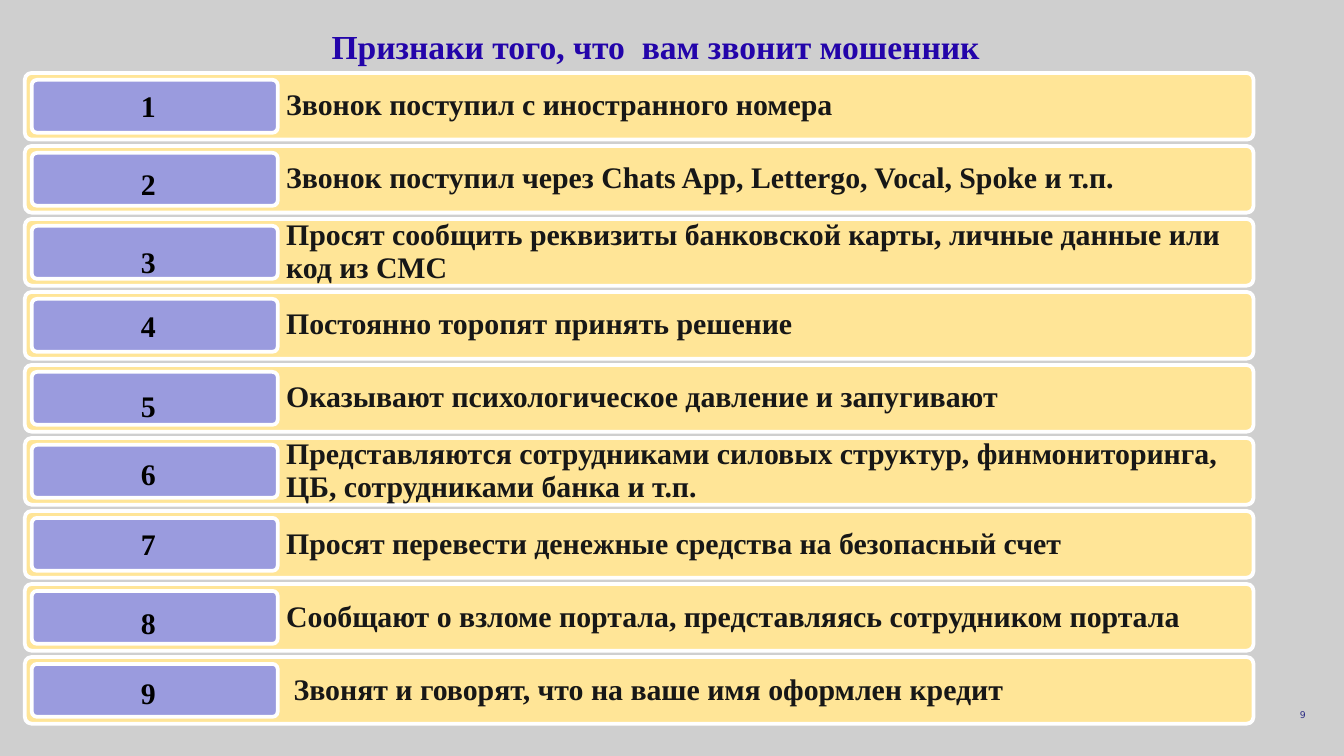
from pptx import Presentation
from pptx import util as u
from pptx.dml.color import RGBColor
from pptx.enum import shapes, text

GREY = RGBColor(0xCF, 0xCF, 0xCF)
WHITE = RGBColor(0xFF, 0xFF, 0xFF)
YELLOW = RGBColor(0xFF, 0xE5, 0x97)
LILAC = RGBColor(0x9A, 0x9B, 0xDE)
BLUE = RGBColor(0x23, 0x04, 0xAA)
NAVY = RGBColor(0x2B, 0x2C, 0x84)
INK = RGBColor(0x17, 0x17, 0x17)
BLACK = RGBColor(0, 0, 0)

SERIF = "Times New Roman"
ROW_PITCH = 1.38

# Each sign with the drop of its number below the top of the row, in cm
SIGNS = [
    ("Звонок поступил с иностранного номера", 0.09),
    ("Звонок поступил через Chats App, Lettergo, Vocal, Spoke и т.п.", 0.19),
    ("Просят сообщить реквизиты банковской карты, личные данные или код из СМС", 0.28),
    ("Постоянно торопят принять решение", 0.12),
    ("Оказывают психологическое давление и запугивают", 0.24),
    ("Представляются сотрудниками силовых структур, финмониторинга, "
     "ЦБ, сотрудниками банка и т.п.", 0.15),
    ("Просят перевести денежные средства на безопасный счет", 0.09),
    ("Сообщают о взломе портала, представляясь сотрудником портала", 0.21),
    (" Звонят и говорят, что на ваше имя оформлен кредит", 0.15),
]


def add_text(page, box, words, size, color, align, inset,
             font=SERIF, bold=True, anchor=text.MSO_ANCHOR.MIDDLE):
    """Place one paragraph of text in box (left, top, width, height in cm)."""
    frame = page.shapes.add_textbox(*map(u.Cm, box)).text_frame
    frame.word_wrap = True
    frame.vertical_anchor = anchor
    frame.margin_left = frame.margin_right = u.Cm(inset)
    frame.margin_top = frame.margin_bottom = u.Cm(min(inset, 0.18))
    para = frame.paragraphs[0]
    para.text = words
    para.alignment = align
    para.font.name = font
    para.font.size = u.Pt(size)
    para.font.bold = bold
    para.font.color.rgb = color
    return para


def add_panel(page, box, fill):
    """Place a rounded panel with a white outline."""
    panel = page.shapes.add_shape(
        shapes.MSO_SHAPE.ROUNDED_RECTANGLE, *map(u.Cm, box))
    panel.adjustments[0] = 0.1
    panel.shadow.inherit = False
    panel.fill.solid()
    panel.fill.fore_color.rgb = fill
    panel.line.color.rgb = WHITE
    panel.line.width = u.Pt(2)


def add_sign(page, box, number, words, drop):
    """Place one row: bar, wording, badge and number."""
    left, top, width, height = box
    text_left = 4.76
    add_panel(page, box, YELLOW)
    para = add_text(page, (left + text_left, top, width - text_left, height),
                    words, 16, INK, text.PP_ALIGN.LEFT, 0.18)
    para.line_spacing = 0.9
    add_panel(page, (left + 0.13, top + 0.13, 4.65, 1), LILAC)
    add_text(page, (left + 1.23, top + drop, 2.21, 0.94), str(number), 16,
             BLACK, text.PP_ALIGN.CENTER, 0.25, anchor=text.MSO_ANCHOR.TOP)


def add_sign_list(page, box):
    """Stack the rows at an equal pitch."""
    left, top, width, height = box
    row_height = height - ROW_PITCH * (len(SIGNS) - 1)
    for index, (words, drop) in enumerate(SIGNS):
        row = (left, top + index * ROW_PITCH, width, row_height)
        add_sign(page, row, index + 1, words, drop)


def main():
    deck = Presentation()
    deck.slide_width, deck.slide_height = u.Cm(25.4), u.Cm(14.29)
    page = deck.slides.add_slide(deck.slide_layouts[6])
    page.background.fill.solid()
    page.background.fill.fore_color.rgb = GREY

    # Title
    add_text(page, (2.64, 0.36, 19.51, 1.04),
             "Признаки того, что  вам звонит мошенник", 18, BLUE,
             text.PP_ALIGN.CENTER, 0.08)
    # Page number
    add_text(page, (24, 13.33, 0.76, 0.36), "9", 5, NAVY,
             text.PP_ALIGN.RIGHT, 0.08, font="DejaVu Sans", bold=False)
    # Numbered signs
    add_sign_list(page, (0.47, 1.38, 23.22, 12.3))

    deck.save("out.pptx")


if __name__ == "__main__":
    main()
